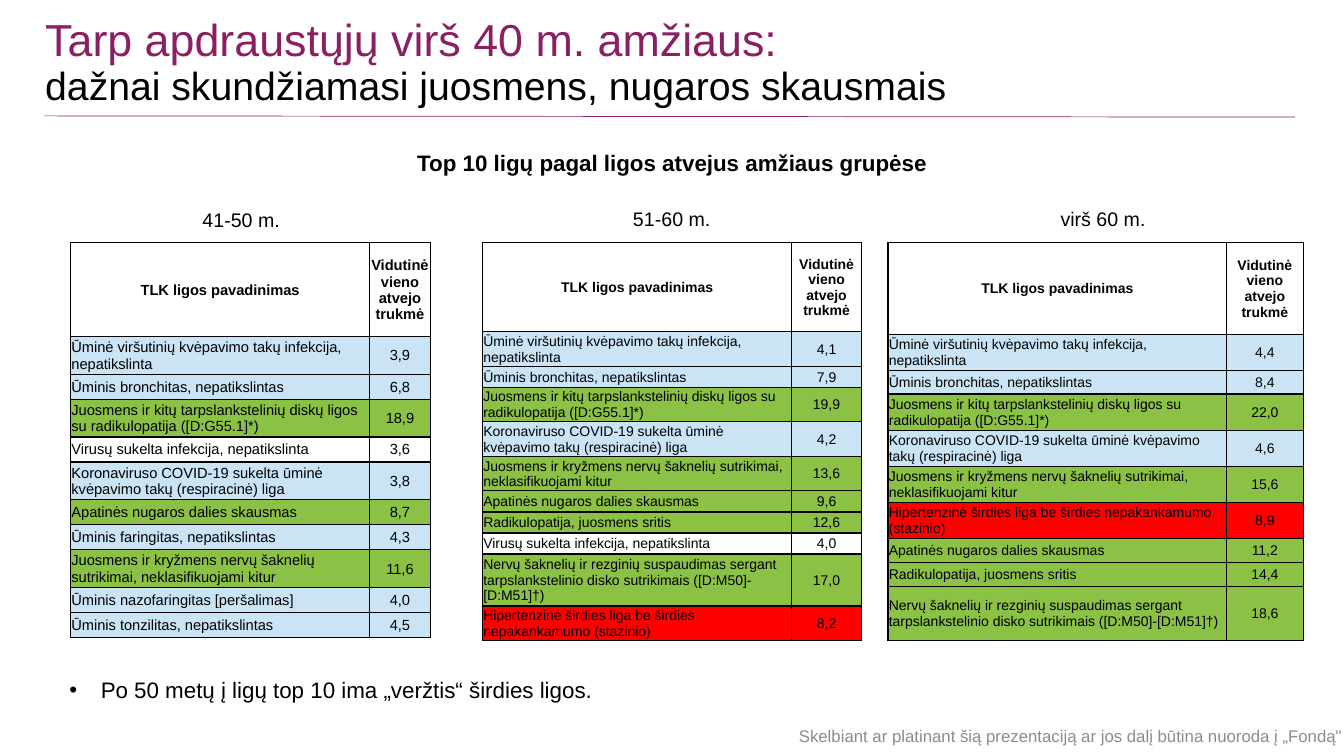
import dataclasses

import lxml.etree
import pptx
import pptx.dml.color
import pptx.enum.shapes
import pptx.enum.text
import pptx.oxml
import pptx.oxml.ns
import pptx.util

Cm, Pt = pptx.util.Cm, pptx.util.Pt
ALIGN = pptx.enum.text.PP_ALIGN
MIDDLE = pptx.enum.text.MSO_ANCHOR.MIDDLE
qn = pptx.oxml.ns.qn


@dataclasses.dataclass(frozen=True)
class Theme:
    font: str = "Arial"
    plum: str = "8A2062"
    black: str = "000000"
    gray: str = "8C8C8C"
    blue: str = "CAE4F6"
    green: str = "8BC145"
    red: str = "FF0000"
    title: float = 32
    second: float = 28
    body: float = 16
    label: float = 14
    note: float = 12


THEME = Theme()

# key: name, fill, lines of text in its row
ILLS = {
    "airway": ("Ūminė viršutinių kvėpavimo takų infekcija, nepatikslinta", THEME.blue, 2),
    "bronchi": ("Ūminis bronchitas, nepatikslintas", THEME.blue, 1),
    "disc": ("Juosmens ir kitų tarpslankstelinių diskų ligos su radikulopatija ([D:G55.1]*)",
             THEME.green, 2),
    "virus": ("Virusų sukelta infekcija, nepatikslinta", None, 1),
    "covid": ("Koronaviruso COVID-19 sukelta ūminė kvėpavimo takų (respiracinė) liga",
              THEME.blue, 2),
    "back": ("Apatinės nugaros dalies skausmas", THEME.green, 1),
    "throat": ("Ūminis faringitas, nepatikslintas", THEME.blue, 1),
    "sacrum": ("Juosmens ir kryžmens nervų šaknelių sutrikimai, neklasifikuojami kitur",
               THEME.green, 2),
    "nose": ("Ūminis nazofaringitas [peršalimas]", THEME.blue, 1),
    "tonsil": ("Ūminis tonzilitas, nepatikslintas", THEME.blue, 1),
    "radix": ("Radikulopatija, juosmens sritis", THEME.green, 1),
    "nerve": ("Nervų šaknelių ir rezginių suspaudimas sergant tarpslankstelinio disko "
              "sutrikimais ([D:M50]-[D:M51]†)", THEME.green, 3),
    "heart": ("Hipertenzinė širdies liga be širdies nepakankamumo (stazinio)", THEME.red, 2),
}


@dataclasses.dataclass(frozen=True)
class Group:
    """One age group; tall holds row heights for the header and 1, 2, 3 lines."""
    age: str
    spot: tuple
    left: float
    cols: tuple
    tall: tuple
    size: float
    rows: dict


GROUPS = (
    Group("41-50 m.", (2.92, 5.11), 1.78, (7.54, 1.52), (2.36, 0.63, 0.95), 10.5,
          {"airway": "3,9", "bronchi": "6,8", "disc": "18,9", "virus": "3,6",
           "covid": "3,8", "back": "8,7", "throat": "4,3", "sacrum": "11,6",
           "nose": "4,0", "tonsil": "4,5"}),
    Group("51-60 m.", (13.77, 5.08), 12.16, (7.79, 1.76), (2.24, 0.53, 0.87, 1.31), 10,
          {"airway": "4,1", "bronchi": "7,9", "disc": "19,9", "covid": "4,2",
           "sacrum": "13,6", "back": "9,6", "radix": "12,6", "virus": "4,0",
           "nerve": "17,0", "heart": "8,2"}),
    Group("virš 60 m.", (24.64, 5.08), 22.38, (8.53, 1.93), (2.3, 0.6, 0.91, 1.37), 10,
          {"airway": "4,4", "bronchi": "8,4", "disc": "22,0", "covid": "4,6",
           "sacrum": "15,6", "heart": "8,9", "back": "11,2", "radix": "14,4",
           "nerve": "18,6"}),
)


def paint(para, size, color=THEME.black, bold=False):
    for run in para.runs:
        run.font.name = THEME.font
        run.font.size = Pt(size)
        run.font.bold = bold
        run.font.color.rgb = pptx.dml.color.RGBColor.from_string(color)


def add_text(slide, box, text, size, color=THEME.black, bold=False, align=ALIGN.CENTER):
    frame = slide.shapes.add_textbox(*map(Cm, box)).text_frame
    frame.word_wrap = True
    frame.text = text
    para = frame.paragraphs[0]
    para.alignment = align
    paint(para, size, color, bold)
    return frame


def add_title(slide):
    frame = add_text(slide, (0.89, 0.46, 32.11, 2.26), "Tarp apdraustųjų virš 40 m. amžiaus:",
                     THEME.title, THEME.plum, align=ALIGN.LEFT)
    frame.vertical_anchor = MIDDLE
    second = frame.add_paragraph()
    second.text = "dažnai skundžiamasi juosmens, nugaros skausmais"
    paint(second, THEME.second)
    for para in frame.paragraphs:
        para.line_spacing = 0.9


def add_rule(slide):
    ends = map(Cm, (1.12, 2.92, 32.64, 2.95))
    line = slide.shapes.add_connector(pptx.enum.shapes.MSO_CONNECTOR.STRAIGHT, *ends)
    line.line.color.rgb = pptx.dml.color.RGBColor.from_string(THEME.plum)
    line.line.width = Pt(0.5)
    lxml.etree.SubElement(line._element.spPr, qn("a:effectLst"))


def add_bullet(para):
    props = para._p.get_or_add_pPr()
    props.set("marL", str(Cm(0.79)))
    props.set("indent", str(-Cm(0.79)))
    lxml.etree.SubElement(props, qn("a:buFont")).set("typeface", THEME.font)
    lxml.etree.SubElement(props, qn("a:buChar")).set("char", "•")


def add_edges(cell):
    props = cell._tc.get_or_add_tcPr()
    for spot, side in enumerate("LRTB"):
        edge = lxml.etree.Element(qn("a:ln" + side), w=str(Pt(1)))
        fill = lxml.etree.SubElement(edge, qn("a:solidFill"))
        lxml.etree.SubElement(fill, qn("a:srgbClr")).set("val", THEME.black)
        props.insert(spot, edge)


def set_cell(cell, text, size, fill, bold, align):
    cell.text = text
    cell.vertical_anchor = MIDDLE
    cell.margin_left = cell.margin_right = cell.margin_top = Cm(0.02)
    cell.margin_bottom = 0
    para = cell.text_frame.paragraphs[0]
    para.alignment = align
    paint(para, size, bold=bold)
    if fill:
        cell.fill.solid()
        cell.fill.fore_color.rgb = pptx.dml.color.RGBColor.from_string(fill)
    else:
        cell.fill.background()
    add_edges(cell)


def add_group(slide, group):
    add_text(slide, (*group.spot, 6.32, 0.86), group.age, THEME.label)
    rows = [("TLK ligos pavadinimas", "Vidutinė vieno atvejo trukmė", None, 0)]
    for key, days in group.rows.items():
        name, fill, lines = ILLS[key]
        rows.append((name, days, fill, lines))
    high = sum(group.tall[row[3]] for row in rows)
    box = map(Cm, (group.left, 6.12, sum(group.cols), high))
    table = slide.shapes.add_table(len(rows), 2, *box).table
    table.first_row = table.horz_banding = False
    for col, width in zip(table.columns, group.cols):
        col.width = Cm(width)
    for at, (name, days, fill, lines) in enumerate(rows):
        head = at == 0
        table.rows[at].height = Cm(group.tall[lines])
        set_cell(table.cell(at, 0), name, group.size, fill, head,
                 ALIGN.CENTER if head else ALIGN.LEFT)
        set_cell(table.cell(at, 1), days, group.size, fill, head, ALIGN.CENTER)


def main():
    deck = pptx.Presentation()
    deck.slide_width, deck.slide_height = Cm(33.87), Cm(19.05)
    slide = deck.slides.add_slide(deck.slide_layouts[6])
    foot = add_text(slide, (19.35, 18.03, 15.27, 1.02),
                    "Skelbiant ar platinant šią prezentaciją ar jos dalį būtina nuoroda į „Fondą\"",
                    THEME.note, THEME.gray)
    foot.vertical_anchor = MIDDLE
    add_title(slide)
    add_rule(slide)
    for group in GROUPS:
        add_group(slide, group)
    add_text(slide, (9.7, 3.63, 14.48, 0.94),
             "Top 10 ligų pagal ligos atvejus amžiaus grupėse", THEME.body, bold=True)
    point = add_text(slide, (1.5, 16.92, 31.52, 0.94),
                     "Po 50 metų į ligų top 10 ima „veržtis“ širdies ligos.",
                     THEME.body, align=ALIGN.LEFT)
    add_bullet(point.paragraphs[0])
    deck.save("out.pptx")


if __name__ == "__main__":
    main()
